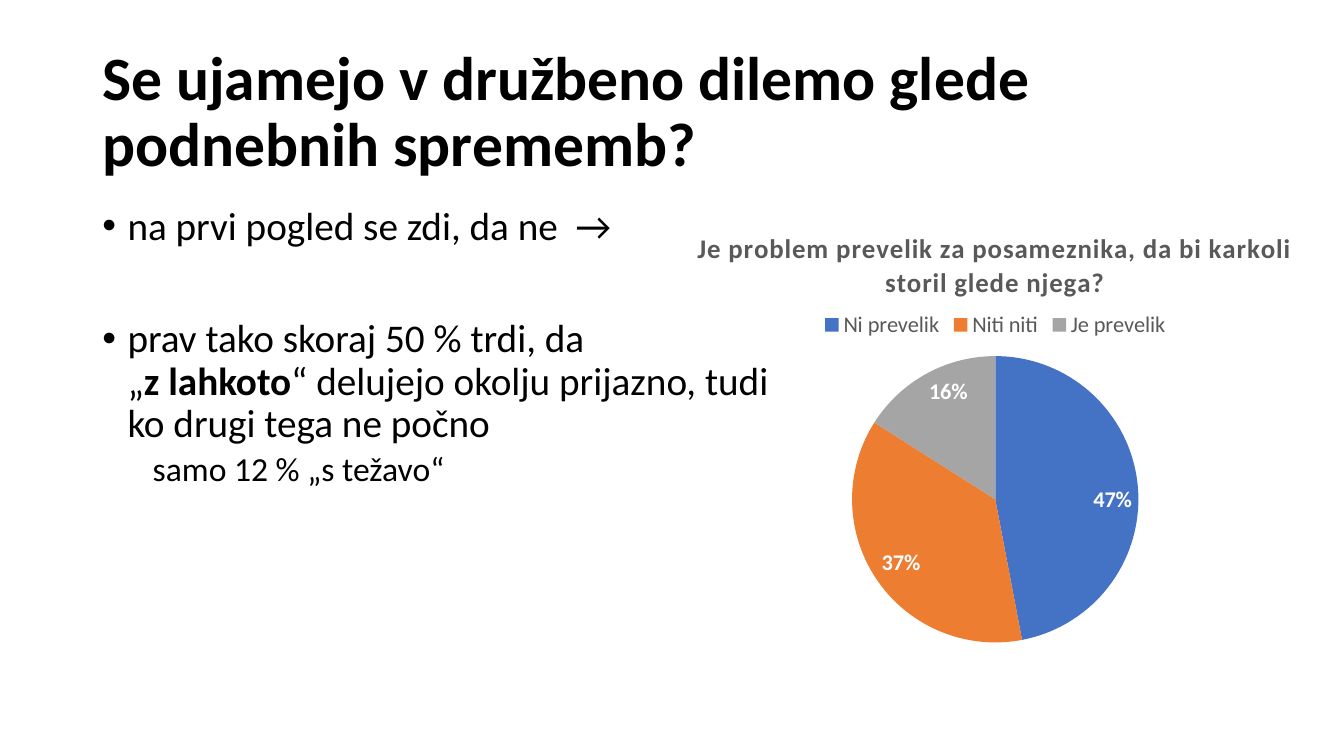
from dataclasses import dataclass

from lxml import etree
from pptx import Presentation
from pptx.chart.data import CategoryChartData
from pptx.dml.color import RGBColor
from pptx.enum.chart import XL_CHART_TYPE, XL_LABEL_POSITION, XL_LEGEND_POSITION
from pptx.enum.text import MSO_ANCHOR
from pptx.oxml import parse_xml
from pptx.oxml.ns import nsdecls, qn
from pptx.util import Pt

PIE = XL_CHART_TYPE.PIE
INSIDE_END = XL_LABEL_POSITION.INSIDE_END
LEGEND_TOP = XL_LEGEND_POSITION.TOP
MIDDLE, TOP = MSO_ANCHOR.MIDDLE, MSO_ANCHOR.TOP


@dataclass(frozen=True)
class Theme:
    """Colours, font and type sizes of the slide."""
    font: str = "Calibri"
    ink: str = "000000"
    muted: str = "595959"
    label: str = "FFFFFF"
    slices: tuple = ("4472C4", "ED7D31", "A5A5A5")
    title: float = 44
    body: float = 28
    detail: float = 24
    chart_title: float = 19.2
    chart: float = 16


THEME = Theme()
TITLE = "Se ujamejo v družbeno dilemo glede podnebnih sprememb?"
POINTS = [
    {"runs": [("na prvi pogled se zdi, da ne  →", False)], "bullet": True},
    {"runs": [("prav tako skoraj 50 % trdi, da\v„", False), ("z lahkoto", True),
              ("“ delujejo okolju prijazno, tudi ko drugi tega ne počno", False)],
     "bullet": True, "before": 50},
    {"runs": [("samo 12 % „s težavo“", False)], "size": THEME.detail,
     "before": 5, "left": 36},
]
CHART_TITLE = "Je problem prevelik za posameznika, da bi karkoli storil glede njega?"
SHARES = {"Ni prevelik": 47, "Niti niti": 37, "Je prevelik": 16}


def style_font(font, size, color, bold=False):
    """Apply the theme font with a size, colour and weight."""
    values = {"name": THEME.font, "size": Pt(size), "bold": bold}
    for name, value in values.items():
        setattr(font, name, value)
    font.color.rgb = RGBColor.from_string(color)


def indent(p, left, bullet):
    """Set the left margin, with a hanging bullet if wanted."""
    pPr = p._p.get_or_add_pPr()
    pPr.set("marL", str(Pt(left)))
    pPr.set("indent", str(Pt(-18 if bullet else 0)))
    if bullet:
        etree.SubElement(pPr, qn("a:buFont")).set("typeface", "Arial")
        etree.SubElement(pPr, qn("a:buChar")).set("char", "•")


def add_paragraph(p, runs, size=THEME.body, before=0, left=18, bullet=False):
    """Fill a paragraph with plain and bold runs."""
    indent(p, left, bullet)
    p.line_spacing = 0.9
    p.space_before = Pt(before)
    for text, bold in runs:
        for i, line in enumerate(text.split("\v")):
            if i:
                p.add_line_break()
            r = p.add_run()
            r.text = line
            style_font(r.font, size, THEME.ink, bold)


def add_text(s, box, paragraphs, anchor=TOP):
    """Add a wrapping text box holding the given paragraphs."""
    tf = s.shapes.add_textbox(*map(Pt, box)).text_frame
    tf.word_wrap = True
    tf.vertical_anchor = anchor
    for i, paragraph in enumerate(paragraphs):
        p = tf.add_paragraph() if i else tf.paragraphs[0]
        add_paragraph(p, **paragraph)


def place(element, before, **fractions):
    """Give a chart part a fixed place as fractions of the chart."""
    modes = "".join(f'<c:{k}Mode val="edge"/>' for k in "xy")
    values = "".join(f'<c:{k} val="{v}"/>' for k, v in fractions.items())
    target = '<c:layoutTarget val="inner"/>' if element.tag == qn("c:plotArea") else ""
    for old in element.findall(qn("c:layout")):
        element.remove(old)
    layout = parse_xml(f'<c:layout {nsdecls("c")}><c:manualLayout>{target}{modes}{values}'
                       "</c:manualLayout></c:layout>")
    element.find(qn(before)).addprevious(layout)


def add_chart_title(chart):
    """Add the spaced bold chart title."""
    chart.has_title = True
    title = chart.chart_title
    p = title.text_frame.paragraphs[0]
    r = p.add_run()
    r.text = CHART_TITLE
    style_font(r.font, THEME.chart_title, THEME.muted, True)
    r.font._element.set("spc", "50")
    title.include_in_layout = False
    place(title._element, "c:overlay", x=0.1, y=0.05)


def add_legend(chart):
    """Add the legend above the pie."""
    chart.has_legend = True
    legend = chart.legend
    legend.position = LEGEND_TOP
    legend.include_in_layout = False
    style_font(legend.font, THEME.chart, THEME.muted)


def add_pie(s, box):
    """Add the pie chart of answers with percentage labels."""
    data = CategoryChartData()
    data.categories = list(SHARES)
    data.add_series("Series 1", list(SHARES.values()))
    chart = s.shapes.add_chart(PIE, *map(Pt, box), data).chart
    style_font(chart.font, THEME.chart, THEME.ink)
    add_chart_title(chart)
    add_legend(chart)
    plot = chart.plots[0]
    plot.vary_by_categories = True
    for i, color in enumerate(THEME.slices):
        fill = plot.series[0].points[i].format.fill
        fill.solid()
        fill.fore_color.rgb = RGBColor.from_string(color)
    labels = plot.series[0].data_labels
    values = {"show_percentage": True, "show_value": False, "show_legend_key": False,
              "number_format": "0%", "number_format_is_linked": False,
              "position": INSIDE_END}
    for name, value in values.items():
        setattr(labels, name, value)
    style_font(labels.font, THEME.chart, THEME.label, True)
    place(plot._element.getparent(), "c:pieChart", x=0.31, y=0.34, w=0.38, h=0.63)


def main():
    """Build the slide and save it."""
    prs = Presentation()
    prs.slide_width, prs.slide_height = Pt(960), Pt(540)
    s = prs.slides.add_slide(prs.slide_layouts[6])
    title = {"runs": [(TITLE, True)], "size": THEME.title, "left": 0}
    add_text(s, (66, 28.8, 828, 104.4), [title], MIDDLE)
    add_text(s, (66, 144, 508, 343), POINTS)
    add_pie(s, (440.6, 144, 540.7, 324.7))
    prs.save("out.pptx")


if __name__ == "__main__":
    main()
